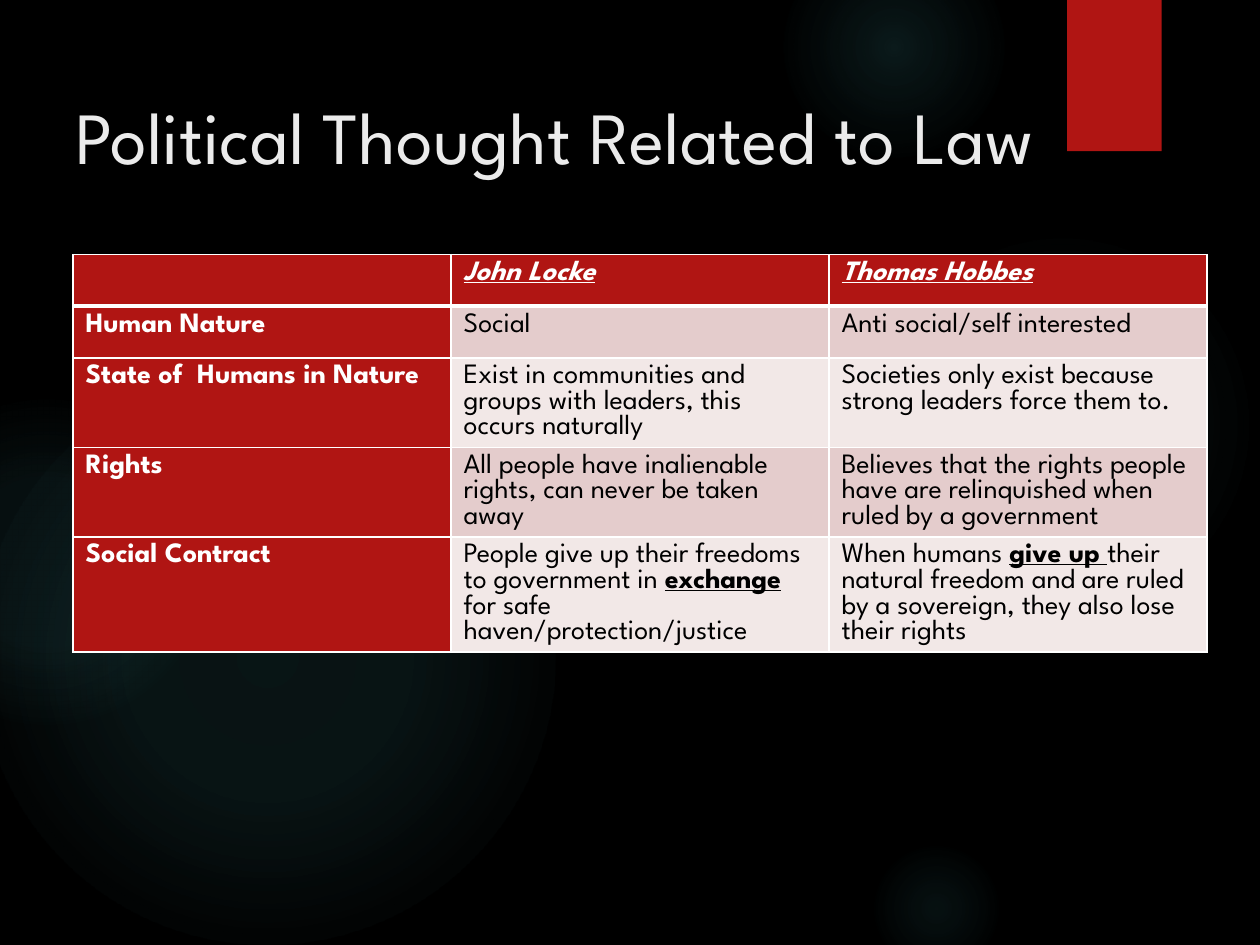
import pptx
import pptx.util
import pptx.dml.color
import pptx.enum.shapes
import pptx.enum.text
import pptx.oxml
import pptx.oxml.ns

Inches, Pt = pptx.util.Inches, pptx.util.Pt
Kind = pptx.enum.shapes.MSO_SHAPE
NS = pptx.oxml.ns.nsdecls("a")

RED, TEAL, WHITE, BLACK = "B01513", "50B9C1", "FFFFFF", "000000"
PALE, ROSE = "F2E8E7", "E4CCCC"
KEY = {"bold": True, "underline": True}
HEAD = {"bold": True, "italic": True, "underline": True}

# left, top, size, then (position, opacity) stops, all in percent
GLOWS = [
    (6.89, 1.83, 3.08, [(0, 7), (36, 6), (69, 0)]),
    (6.22, -0.5, 1.75, [(0, 14), (36, 7), (73, 0)]),
    (6.89, 6.67, 1.08, [(0, 9), (36, 5), (66, 0)]),
    (-0.17, 2.92, 4.58, [(0, 11), (36, 10), (75, 0)]),
    (-0.92, 3.17, 2.58, [(0, 8), (36, 8), (72, 0)]),
]

# each cell is a list of (text, format) runs
ROWS = [
    [[], [("John Locke", HEAD)], [("Thomas Hobbes", HEAD)]],
    [[("Human Nature", {"bold": True})],
     [("Social", {})],
     [("Anti social/self interested", {})]],
    [[("State of  Humans in Nature", {"bold": True})],
     [("Exist in communities and groups with leaders, this occurs naturally", {})],
     [("Societies only exist because strong leaders force them to.", {})]],
    [[("Rights", {"bold": True})],
     [("All people have inalienable rights, can never be taken away", {})],
     [("Believes that the rights people have are relinquished when ruled by a government", {})]],
    [[("Social Contract", {"bold": True})],
     [("People give up their freedoms to government in ", {}),
      ("exchange", KEY),
      (" for safe haven/protection/justice", {})],
     [("When humans ", {}),
      ("give up ", KEY),
      ("their natural freedom and are ruled by a sovereign, they also lose their rights", {})]],
]


def color(code):
    return pptx.dml.color.RGBColor.from_string(code)


def paint(fill, code):
    fill.solid()
    fill.fore_color.rgb = color(code)


class Deck:
    """Holds the text style and the current slide."""

    def __init__(self, slide, font):
        self.slide, self.font = slide, font
        paint(slide.background.fill, BLACK)

    def label(self, para, text, size, code, form):
        """Add one formatted run to a paragraph."""
        run = para.add_run()
        run.text = text
        for name, value in {"name": self.font, "size": Pt(size), **form}.items():
            setattr(run.font, name, value)
        run.font.color.rgb = color(code)

    def shape(self, kind, *box):
        item = self.slide.shapes.add_shape(kind, *map(Inches, box))
        item.shadow.inherit = False
        item.line.fill.background()
        return item

    def glow(self, left, top, size, stops):
        item = self.shape(Kind.OVAL, left, top, size, size)
        marks = "".join(
            f'<a:gs pos="{pos * 1000}"><a:srgbClr val="{TEAL}">'
            f'<a:alpha val="{alpha * 1000}"/></a:srgbClr></a:gs>'
            for pos, alpha in stops)
        grad = pptx.oxml.parse_xml(
            f'<a:gradFill {NS}><a:gsLst>{marks}</a:gsLst><a:path path="circle">'
            '<a:fillToRect l="50000" t="50000" r="50000" b="50000"/>'
            '</a:path></a:gradFill>')
        item.element.spPr.insert(2, grad)

    def flag(self, *box):
        """Add the red tab with its soft shadow below."""
        item = self.shape(Kind.RECTANGLE, *box)
        paint(item.fill, RED)
        blur, dist = Pt(3), Pt(2)
        shade = pptx.oxml.parse_xml(
            f'<a:outerShdw {NS} blurRad="{blur}" dist="{dist}" dir="5400000" '
            f'rotWithShape="0"><a:srgbClr val="{BLACK}"><a:alpha val="45000"/>'
            '</a:srgbClr></a:outerShdw>')
        item.element.spPr.find(pptx.oxml.ns.qn("a:effectLst")).append(shade)

    def title(self, text, *box):
        item = self.slide.shapes.title
        for name, value in zip(("left", "top", "width", "height"), box):
            setattr(item, name, Inches(value))
        frame = item.text_frame
        form = {"word_wrap": True, "auto_size": pptx.enum.text.MSO_AUTO_SIZE.NONE,
                "vertical_anchor": pptx.enum.text.MSO_ANCHOR.MIDDLE,
                "margin_bottom": Inches(0.23)}
        for name, value in form.items():
            setattr(frame, name, value)
        para = frame.paragraphs[0]
        para.alignment = pptx.enum.text.PP_ALIGN.LEFT
        self.label(para, text, 42, "EBEBEB", {})
        item.element.getparent().append(item.element)  # bring to front

    def edge(self, cell, widths):
        props = cell._tc.get_or_add_tcPr()
        for spot, (side, width) in enumerate(widths.items()):
            props.insert(spot, pptx.oxml.parse_xml(
                f'<a:ln{side} {NS} w="{Pt(width)}"><a:solidFill>'
                f'<a:srgbClr val="{WHITE}"/></a:solidFill></a:ln{side}>'))

    def table(self, rows, left, top, wide, high):
        count = len(rows[0])
        grid = self.slide.shapes.add_table(
            len(rows), count, Inches(left), Inches(top),
            Inches(wide * count), Inches(high * len(rows))).table
        for r, row in enumerate(rows):
            for c, runs in enumerate(row):
                cell = grid.cell(r, c)
                head = r == 0 or c == 0
                paint(cell.fill, RED if head else ROSE if r % 2 else PALE)
                self.edge(cell, {"L": 1, "R": 1, "T": 3 if r == 1 else 1,
                                 "B": 3 if r == 0 else 1})
                para = cell.text_frame.paragraphs[0]
                para.font.size = Pt(16)
                for text, form in runs:
                    self.label(para, text, 16, WHITE if head else BLACK,
                               {"bold": False, **form})


def main():
    show = pptx.Presentation()
    show.slide_width, show.slide_height = Inches(10), Inches(7.5)
    deck = Deck(show.slides.add_slide(show.slide_layouts[5]), "League Spartan")
    for glow in GLOWS:
        deck.glow(*glow)
    deck.flag(8.47, 0, 0.75, 1.2)
    deck.title("Political Thought Related to Law", 0.5, 0.58, 9, 1.17)
    deck.table(ROWS, 0.58, 2.02, 3, 0.41)
    show.save("out.pptx")


if __name__ == "__main__":
    main()
